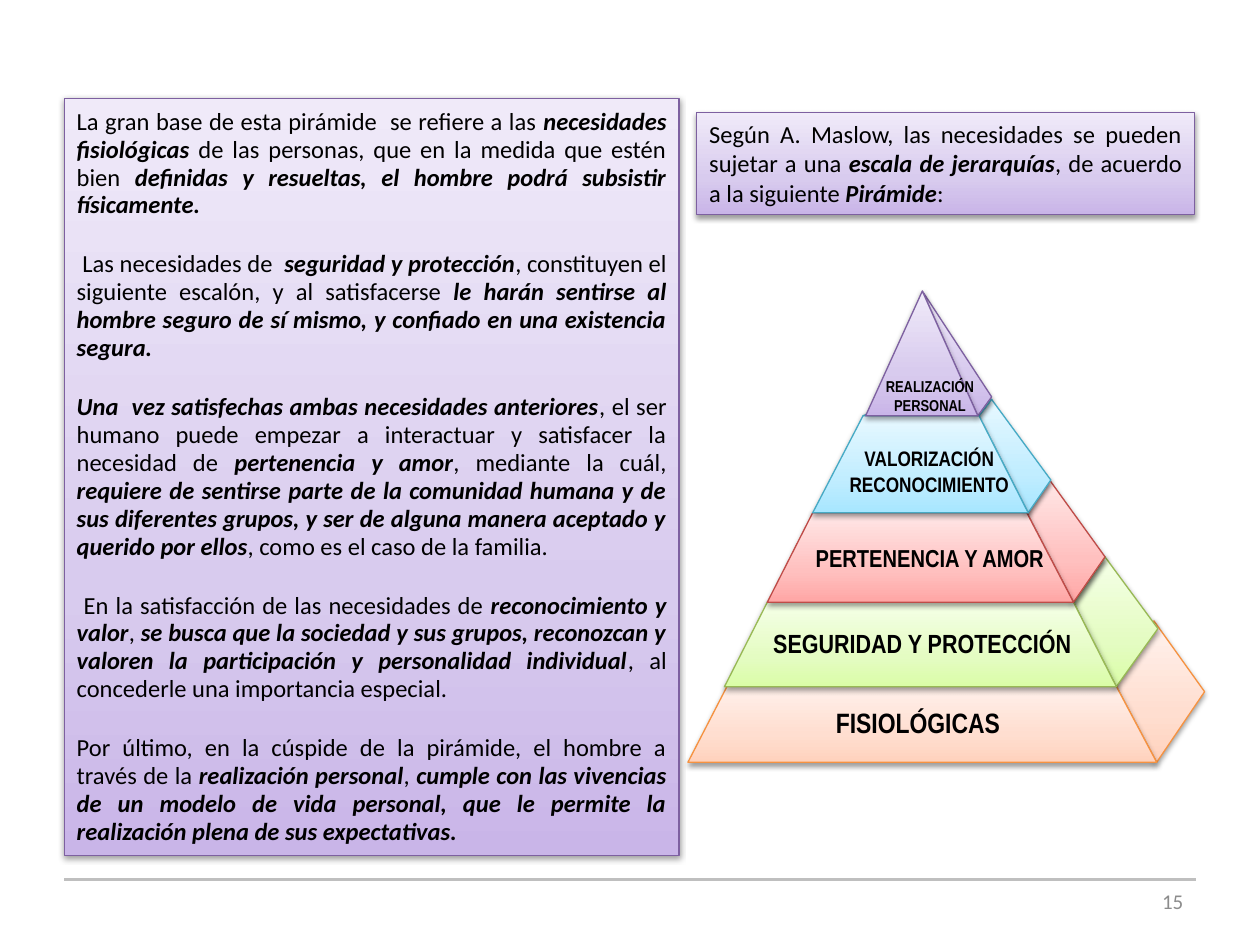
from lxml import etree
from pptx import Presentation
from pptx.dml.color import RGBColor
from pptx.enum.shapes import MSO_CONNECTOR, MSO_SHAPE
from pptx.enum.text import MSO_ANCHOR, PP_ALIGN
from pptx.oxml import parse_xml
from pptx.oxml.ns import nsdecls, qn
from pptx.util import Inches, Pt

RECTANGLE = MSO_SHAPE.RECTANGLE
STRAIGHT = MSO_CONNECTOR.STRAIGHT
TOP, MIDDLE = MSO_ANCHOR.TOP, MSO_ANCHOR.MIDDLE
CENTER, RIGHT, JUSTIFY = PP_ALIGN.CENTER, PP_ALIGN.RIGHT, PP_ALIGN.JUSTIFY

COLORS = {"text": "000000", "number": "8C8C8C", "rule": "BFBFBF"}
# Each theme: outline, then gradient from bottom to top
THEMES = {
    "purple": ("7D60A0", "C9B5E8", "D8CBEE", "F0EAF9"),
    "blue": ("46AAC5", "A7E6FF", "C1EDFF", "E7F8FF"),
    "red": ("BF4C48", "FFA6A5", "FFC0BF", "FFE7E7"),
    "green": ("98B955", "DAFDA7", "E4FCC2", "F5FFE7"),
    "orange": ("F69240", "FFD2BD", "FFDED0", "FFF2ED"),
}
GRADIENT_STOPS = (0, 35, 100)

# Asterisks enclose the bold italic passages
EXPLANATION = [
    "La gran base de esta pirámide  se refiere a las *necesidades fisiológicas *de las "
    "personas, que en la medida que estén bien *definidas y resueltas, el hombre podrá "
    "subsistir físicamente.*",
    " Las necesidades de  *seguridad y protección*, constituyen el siguiente escalón, y al "
    "satisfacerse *le harán sentirse al hombre seguro de sí mismo, y confiado en una "
    "existencia segura.*",
    "*Una  vez satisfechas ambas necesidades anteriores*, el ser humano puede empezar a "
    "interactuar y satisfacer la necesidad de *pertenencia y amor*, mediante la cuál, "
    "*requiere de sentirse parte de la comunidad humana y de sus diferentes grupos, y ser "
    "de alguna manera aceptado y querido por ellos*, como es el caso de la familia.",
    " En la satisfacción de las necesidades de *reconocimiento y valor*, *se busca que la "
    "sociedad y sus grupos, reconozcan y valoren la participación y personalidad "
    "individual*, al concederle una importancia especial.",
    "Por último, en la cúspide de la pirámide, el hombre a través de la *realización "
    "personal*, *cumple con las vivencias de un modelo de vida personal, que le permite la "
    "realización plena de sus expectativas.*",
]
INTRODUCTION = [
    "Según A. Maslow, las necesidades se pueden sujetar a una *escala de jerarquías*, de "
    "acuerdo a la siguiente *Pirámide*:"
]

# Tier corners, in inches from the pyramid's top left:
# front (bottom left, bottom right, top right, top left), outer right, back right, back left
TIERS = [
    ("orange", (0, 3.74), (3.72, 3.74), (3.38, 3.1), (0.33, 3.1),
     (4.1, 3.18), (3.7, 2.62), (0.76, 2.62)),
    ("green", (0.29, 3.14), (3.4, 3.14), (3.06, 2.47), (0.63, 2.47),
     (3.73, 2.68), (3.31, 2.11), (1.11, 2.11)),
    ("red", (0.63, 2.47), (3.06, 2.47), (2.69, 1.76), (0.99, 1.76),
     (3.31, 2.11), (2.87, 1.5), (1.47, 1.5)),
    ("blue", (0.99, 1.76), (2.7, 1.76), (2.31, 0.99), (1.39, 0.99),
     (2.88, 1.5), (2.41, 0.86), (1.71, 0.86)),
]
PEAK_FRONT = [(1.41, 0.99), (2.3, 0.99), (1.86, 0)]
PEAK_SIDE = [(2.3, 0.99), (2.41, 0.84), (1.86, 0)]

# Label, size, box relative to the pyramid
LABELS = [
    ("FISIOLÓGICAS", 16, (0.21, 3.24, 3.23, 0.37)),
    ("SEGURIDAD Y PROTECCIÓN", 15, (0.44, 2.62, 2.84, 0.35)),
    ("PERTENENCIA Y AMOR", 14, (0.7, 1.95, 2.44, 0.33)),
    ("VALORIZACIÓN RECONOCIMIENTO", 12, (1.09, 1.18, 1.65, 0.5)),
    ("REALIZACIÓN PERSONAL", 9, (1.21, 0.63, 1.42, 0.4)),
]


def write_text(shape, paragraphs, size=14, font="Calibri", color="text", bold=False,
               align=JUSTIFY, anchor=TOP, line_spacing=None, gap=0):
    frame = shape.text_frame
    frame.word_wrap = True
    frame.vertical_anchor = anchor
    for index, content in enumerate(paragraphs):
        para = frame.add_paragraph() if index else frame.paragraphs[0]
        para.alignment = align
        if line_spacing:
            para.line_spacing = line_spacing
        if index:
            para.space_before = Pt(gap)
        for part, words in enumerate(content.split("*")):
            if not words:
                continue
            emphasis = part % 2 == 1
            span = para.add_run()
            span.text = words
            span.font.size = Pt(size)
            span.font.name = font
            span.font.bold = bold or emphasis
            span.font.italic = emphasis
            span.font.color.rgb = RGBColor.from_string(COLORS[color])


def add_text(page, box, paragraphs, **formatting):
    label = page.shapes.add_textbox(*map(Inches, box))
    write_text(label, paragraphs, **formatting)


def style_shape(shape, theme):
    """Apply the outline, three-stop gradient and soft shadow of a theme."""
    outline, *tones = THEMES[theme]
    shape.line.color.rgb = RGBColor.from_string(outline)
    shape.line.width = Pt(0.75)
    shape.shadow.inherit = False
    stops = "".join(
        f'<a:gs pos="{position * 1000}"><a:srgbClr val="{tone}"/></a:gs>'
        for position, tone in zip(GRADIENT_STOPS, tones))
    properties = shape.element.spPr
    properties.find(qn("a:ln")).addprevious(parse_xml(
        f'<a:gradFill {nsdecls("a")} rotWithShape="1"><a:gsLst>{stops}</a:gsLst>'
        '<a:lin ang="16200000" scaled="0"/></a:gradFill>'))
    properties.find(qn("a:effectLst")).append(parse_xml(
        f'<a:outerShdw {nsdecls("a")} blurRad="40000" dist="20000" dir="5400000" '
        'rotWithShape="0"><a:srgbClr val="000000"><a:alpha val="38000"/></a:srgbClr>'
        '</a:outerShdw>'))


def add_panel(page, box, paragraphs, **formatting):
    panel = page.shapes.add_shape(RECTANGLE, *map(Inches, box))
    style_shape(panel, "purple")
    write_text(panel, paragraphs, anchor=MIDDLE, **formatting)


def add_tier(page, origin, theme, faces):
    group = page.shapes.add_group_shape()
    for face in faces:
        points = [(Inches(origin[0] + x), Inches(origin[1] + y)) for x, y in face]
        builder = group.shapes.build_freeform(*points[0])
        builder.add_line_segments(points[1:], close=True)
        style_shape(builder.convert_to_shape(), theme)


def add_pyramid(page, box):
    left, top = box[:2]
    for theme, low_left, low_right, high_right, high_left, outer, back_right, back_left in TIERS:
        add_tier(page, (left, top), theme, [
            [low_right, high_right, back_right, outer],
            [high_left, high_right, back_right, back_left],
            [low_left, low_right, high_right, high_left],
        ])
    add_tier(page, (left, top), "purple", [PEAK_SIDE, PEAK_FRONT])
    for name, size, (x, y, width, height) in LABELS:
        add_text(page, (left + x, top + y, width, height), [name],
                 size=size, font="Arial Narrow", bold=True, align=CENTER)


def add_footer(page, box):
    left, top, width, height = box
    rule = page.shapes.add_connector(
        STRAIGHT, Inches(left), Inches(top), Inches(left + width), Inches(top))
    rule.line.color.rgb = RGBColor.from_string(COLORS["rule"])
    rule.line.width = Pt(2)
    etree.SubElement(rule.element.spPr, qn("a:effectLst"))
    number_width = 2.33
    add_text(page, (left + width - number_width, top - 0.03, number_width, height), ["15"],
             size=12, color="number", align=RIGHT, anchor=MIDDLE)


def main():
    deck = Presentation()
    deck.slide_width, deck.slide_height = Inches(10), Inches(7.5)
    page = deck.slides.add_slide(deck.slide_layouts[6])
    # Footer rule and page number
    add_footer(page, (0.51, 6.98, 8.98, 0.4))
    # Explanation on the left
    add_panel(page, (0.51, 0.78, 4.88, 6.01), EXPLANATION, line_spacing=0.95, gap=17.7)
    # Pyramid and its introduction on the right
    add_pyramid(page, (5.46, 2.31, 4.1, 3.74))
    add_panel(page, (5.53, 0.89, 3.95, 0.81), INTRODUCTION)
    deck.save("out.pptx")


if __name__ == "__main__":
    main()
